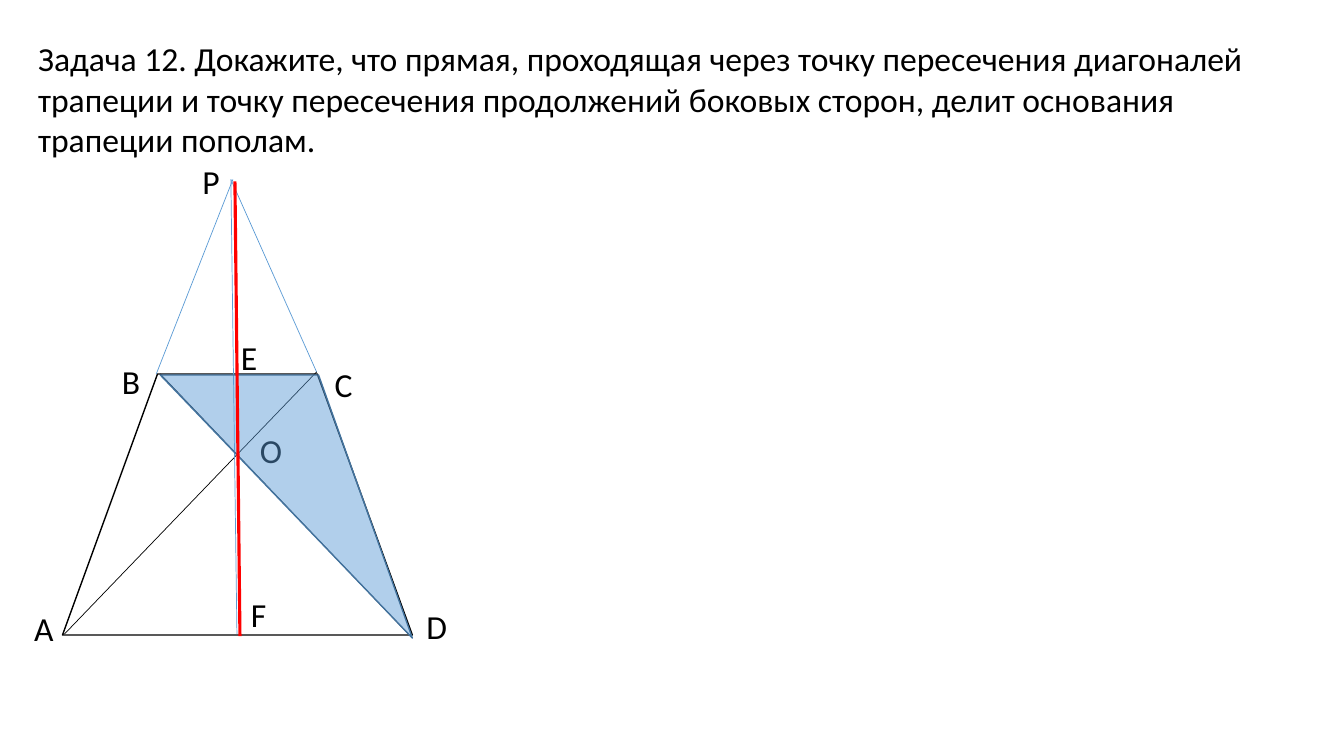
from lxml.etree import SubElement
from pptx import Presentation
from pptx.dml.color import RGBColor
from pptx.enum.shapes import MSO_CONNECTOR as Connector, MSO_SHAPE as Shape
from pptx.enum.text import MSO_AUTO_SIZE as AutoSize
from pptx.oxml.ns import qn
from pptx.util import Inches, Pt

BLACK = RGBColor(0x00, 0x00, 0x00)
BLUE = RGBColor(0x5B, 0x9B, 0xD5)
DARK_BLUE = RGBColor(0x43, 0x73, 0x9E)
RED = RGBColor(0xFF, 0x00, 0x00)

TASK = (
    "Задача 12. Докажите, что прямая, проходящая через точку пересечения диагоналей "
    "трапеции и точку пересечения продолжений боковых сторон, делит основания "
    "трапеции пополам."
)
APEX = (2.29, 1.78)
TOP_LEFT = (1.59, 3.71)
TOP_RIGHT = (3.14, 3.69)
THIN_LINES = [
    ((1.55, 3.71), (2.31, 1.78), BLUE),
    (TOP_RIGHT, APEX, BLUE),
    (TOP_LEFT, (4.05, 6.29), BLACK),
    (TOP_RIGHT, (0.64, 6.29), BLACK),
    (APEX, (2.35, 6.29), BLUE),
]
POINT_LABELS = [
    ("P", 1.91, 1.55),
    ("А", 0.24, 5.98),
    ("В", 1.11, 3.53),
    ("С", 3.22, 3.56),
    ("D", 4.13, 5.96),
    ("E", 2.29, 3.29),
    ("F", 2.39, 5.84),
    ("O", 2.48, 4.22),
]


class Drawing:
    font_format = {"name": "Calibri", "size": Pt(24)}

    def __init__(self, page):
        self.shapes = page.shapes

    def text(self, content, left, top, width=0.41, height=0.5):
        box = self.shapes.add_textbox(*map(Inches, (left, top, width, height)))
        frame = box.text_frame
        frame.word_wrap = True
        frame.auto_size = AutoSize.SHAPE_TO_FIT_TEXT
        span = frame.paragraphs[0].add_run()
        span.text = content
        for name, value in self.font_format.items():
            setattr(span.font, name, value)
        span.font.color.rgb = BLACK

    def outline(self, shape, color, weight):
        shape.line.color.rgb = color
        shape.line.width = Pt(weight)

    def line(self, start, end, color, weight):
        connector = self.shapes.add_connector(
            Connector.STRAIGHT, *map(Inches, start + end)
        )
        self.outline(connector, color, weight)
        SubElement(connector._element.spPr, qn("a:effectLst"))

    def trapezoid(self, left, top, width, height, slant):
        shape = self.shapes.add_shape(
            Shape.TRAPEZOID, *map(Inches, (left, top, width, height))
        )
        shape.adjustments[0] = slant
        shape.shadow.inherit = False
        shape.fill.background()
        self.outline(shape, BLACK, 1)

    def polygon(self, points, fill, opacity, color):
        start, *rest = [tuple(map(Inches, point)) for point in points]
        builder = self.shapes.build_freeform(*start)
        builder.add_line_segments(rest, close=True)
        shape = builder.convert_to_shape()
        shape.shadow.inherit = False
        shape.fill.solid()
        shape.fill.fore_color.rgb = fill
        shade = shape._element.spPr.find(qn("a:solidFill")).find(qn("a:srgbClr"))
        SubElement(shade, qn("a:alpha"), val=str(opacity * 1000))
        self.outline(shape, color, 1)


def main():
    deck = Presentation()
    deck.slide_width = Inches(13.33)
    deck.slide_height = Inches(7.5)
    drawing = Drawing(deck.slides.add_slide(deck.slide_layouts[6]))
    drawing.text(TASK, 0.28, 0.33, 12.53, 1.31)
    drawing.trapezoid(0.62, 3.71, 3.47, 2.59, 0.364)
    for start, end, color in THIN_LINES:
        drawing.line(start, end, color, 0.5)
    for name, left, top in POINT_LABELS:
        drawing.text(name, left, top)
    drawing.polygon([(1.59, 3.72), (3.16, 3.72), (4.09, 6.33)], BLUE, 47, DARK_BLUE)
    drawing.line((2.33, 1.8), (2.38, 6.31), RED, 2.25)
    deck.save("out.pptx")


if __name__ == "__main__":
    main()
